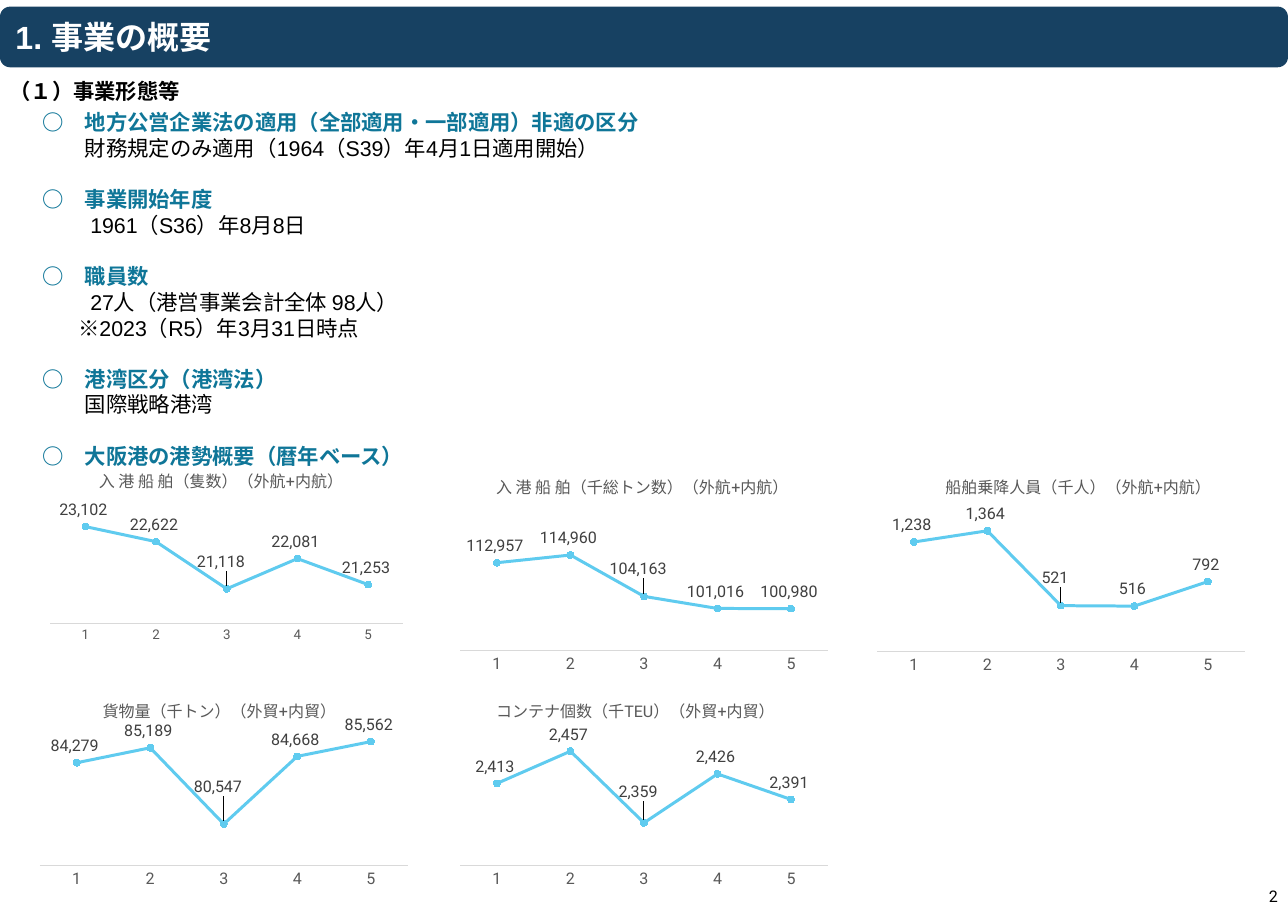
from pptx import Presentation
from pptx.chart.data import CategoryChartData
from pptx.dml.color import RGBColor
from pptx.enum.chart import XL_CHART_TYPE, XL_LABEL_POSITION, XL_MARKER_STYLE, XL_TICK_MARK
from pptx.enum.shapes import MSO_SHAPE
from pptx.enum.text import MSO_ANCHOR, PP_ALIGN
from pptx.oxml import parse_xml
from pptx.oxml.ns import nsdecls, qn
from pptx.util import Pt

COLORS = {"bar": "174162", "white": "FFFFFF", "black": "000000", "heading": "0F7698",
          "line": "5FCBEF", "label": "404040", "axis_text": "595959", "axis_line": "D9D9D9"}
NUMBER_FORMAT = r"#,##0_);[Red]\(#,##0\)"
NO_LEADER_LINES = (
    f'<c:extLst {nsdecls("c")}><c:ext uri="{{CE6537A1-D6FC-4f65-9D91-7224C49458BB}}" '
    'xmlns:c15="http://schemas.microsoft.com/office/drawing/2012/chart">'
    '<c15:showLeaderLines val="0"/></c:ext></c:extLst>')


def style_font(font, size, color, bold=False, name="Roboto"):
    font.size, font.bold, font.name = Pt(size), bold, name
    font.color.rgb = RGBColor.from_string(COLORS[color])


def set_layout(parent, position, modes, **sizes):
    """Give a chart part a manual layout, in fractions of the chart."""
    for old in parent.findall(qn("c:layout")):
        parent.remove(old)
    values = "".join(f'<c:{key} val="{value}"/>' for key, value in sizes.items())
    parent.insert(position, parse_xml(
        f'<c:layout {nsdecls("c")}><c:manualLayout>{modes}{values}</c:manualLayout></c:layout>'))


prs = Presentation()
prs.slide_width, prs.slide_height = Pt(964), Pt(680.4)
slide = prs.slides.add_slide(prs.slide_layouts[5])

# Title on its bar
title = slide.shapes.title
title.left, title.top, title.width, title.height = Pt(0), Pt(5), Pt(964), Pt(45.4)
bar = slide.shapes.add_shape(MSO_SHAPE.ROUNDED_RECTANGLE, title.left, title.top,
                             title.width, title.height)
bar.shadow.inherit = False
bar.fill.solid()
bar.fill.fore_color.rgb = RGBColor.from_string(COLORS["bar"])
bar.line.fill.background()
title._element.addprevious(bar._element)
title_frame = title.text_frame
title_frame.text = "1. 事業の概要"
title_frame.vertical_anchor = MSO_ANCHOR.MIDDLE
title_frame.margin_left = title_frame.margin_right = Pt(11.6)
title_frame.paragraphs[0].alignment = PP_ALIGN.LEFT
style_font(title_frame.paragraphs[0].font, 24, "white", True, "Arial")

# Section heading
section = slide.shapes.add_textbox(Pt(0), Pt(54.7), Pt(165), Pt(26.6)).text_frame
section.word_wrap = True
section.text = "（１）事業形態等"
style_font(section.paragraphs[0].font, 16, "black", True)

# Overview: each heading with its (left indent, text) lines
overview = [
    ("○　地方公営企業法の適用（全部適用・一部適用）非適の区分",
     [(32, "財務規定のみ適用（1964（S39）年4月1日適用開始）")]),
    ("○　事業開始年度", [(36, "1961（S36）年8月8日")]),
    ("○　職員数", [(36, "27人（港営事業会計全体 98人）"), (11, "　※2023（R5）年3月31日時点")]),
    ("○　港湾区分（港湾法）", [(32, "国際戦略港湾")]),
    ("○　大阪港の港勢概要（暦年ベース）", []),
]
body = slide.shapes.add_textbox(Pt(24.5), Pt(78.5), Pt(870), Pt(278.6)).text_frame
body.word_wrap = True
for number, (heading, lines) in enumerate(overview):
    paragraph = body.add_paragraph() if number else body.paragraphs[0]
    paragraph.text = heading
    paragraph.space_before = Pt(19.2 if number else 0)
    style_font(paragraph.font, 16, "heading", True)
    for indent, line in lines:
        paragraph = body.add_paragraph()
        paragraph.text = line
        paragraph._p.get_or_add_pPr().set("marL", str(Pt(indent)))
        style_font(paragraph.font, 16, "black", name="Arial")

# Port statistics: title, values, frame, axis range, plot area,
# title corner, lift of the third label, axis text size
low_plot = (0.019, 0.228, 0.96, 0.642)
statistics = [
    ("入 港 船 舶（隻数）（外航+内航）", (23102, 22622, 21118, 22081, 21253),
     (27.4, 345.6, 286.6, 153.4), (20000, 23500), (0.035, 0.256, 0.923, 0.536),
     (0.155, 0.01), -0.05, 10),
    ("入 港 船 舶（千総トン数）（外航+内航）", (112957, 114960, 104163, 101016, 100980),
     (339, 347, 286.6, 161.3), (90000, 120000), (0.019, 0.335, 0.96, 0.534),
     (0.105, 0.03), -0.05, 12),
    ("貨物量（千トン）（外貿+内貿）", (84279, 85189, 80547, 84668, 85562),
     (24.5, 514.8, 286.6, 153.4), (78000, 86000), low_plot, (0.175, 0.03), -0.1, 12),
    ("コンテナ個数（千TEU）（外貿+内貿）", (2413, 2457, 2359, 2426, 2391),
     (339, 514.8, 286.6, 153.4), (2300, 2480), low_plot, (0.105, 0.03), -0.07, 12),
    ("船舶乗降人員（千人）（外航+内航）", (1238, 1364, 521, 516, 792),
     (651, 347, 286.6, 161.3), (0, 1600), (0.019, 0.215, 0.96, 0.66),
     (0.19, 0.03), -0.05, 12),
]
edge = '<c:xMode val="edge"/><c:yMode val="edge"/>'
for name, values, frame, limits, plot_box, corner, lift, axis_size in statistics:
    data = CategoryChartData(number_format=NUMBER_FORMAT)
    data.categories = ["1", "2", "3", "4", "5"]
    data.add_series(name, values)
    chart = slide.shapes.add_chart(XL_CHART_TYPE.LINE_MARKERS, *map(Pt, frame), data).chart
    style_font(chart.font, 10, "black")
    chart.has_legend = False
    chart.has_title = True
    chart.chart_title.text_frame.text = name
    style_font(chart.chart_title.text_frame.paragraphs[0].font, 12, "axis_text")
    set_layout(chart.chart_title._element, 1, edge, x=corner[0], y=corner[1])
    x, y, w, h = plot_box
    set_layout(chart._chartSpace.xpath("c:chart/c:plotArea")[0], 0,
               '<c:layoutTarget val="inner"/>' + edge, x=x, y=y, w=w, h=h)

    # Axes
    years = chart.category_axis
    years.major_tick_mark = years.minor_tick_mark = XL_TICK_MARK.NONE
    years.has_major_gridlines = False
    years.format.line.color.rgb = RGBColor.from_string(COLORS["axis_line"])
    years.format.line.width = Pt(0.75)
    style_font(years.tick_labels.font, axis_size, "axis_text")
    amounts = chart.value_axis
    amounts.minimum_scale, amounts.maximum_scale = limits
    amounts.has_major_gridlines = False
    amounts.visible = False

    # Line, markers and labels
    plot = chart.plots[0]
    plot.vary_by_categories = False
    series = plot.series[0]
    series.smooth = False
    series.format.line.color.rgb = RGBColor.from_string(COLORS["line"])
    series.format.line.width = Pt(2.25)
    series.marker.style, series.marker.size = XL_MARKER_STYLE.CIRCLE, 5
    series.marker.format.fill.solid()
    series.marker.format.fill.fore_color.rgb = RGBColor.from_string(COLORS["line"])
    series.marker.format.line.color.rgb = RGBColor.from_string(COLORS["line"])
    labels = series.data_labels
    labels.show_value = True
    labels.number_format, labels.number_format_is_linked = NUMBER_FORMAT, False
    third_label = series.points[2].data_label
    for label in (labels, third_label):
        label.position = XL_LABEL_POSITION.ABOVE
        style_font(label.font, 12, "label")
    set_layout(labels._element.find(qn("c:dLbl")), 1, "", x=-0.01, y=lift)
    labels._element.append(parse_xml(NO_LEADER_LINES))

# Page number
page = slide.shapes.add_textbox(Pt(909.4), Pt(661), Pt(54), Pt(19.4)).text_frame
page.word_wrap = True
page.vertical_anchor = MSO_ANCHOR.MIDDLE
page.text = "2"
page.paragraphs[0].alignment = PP_ALIGN.RIGHT
style_font(page.paragraphs[0].font, 12, "black")

prs.save("out.pptx")
